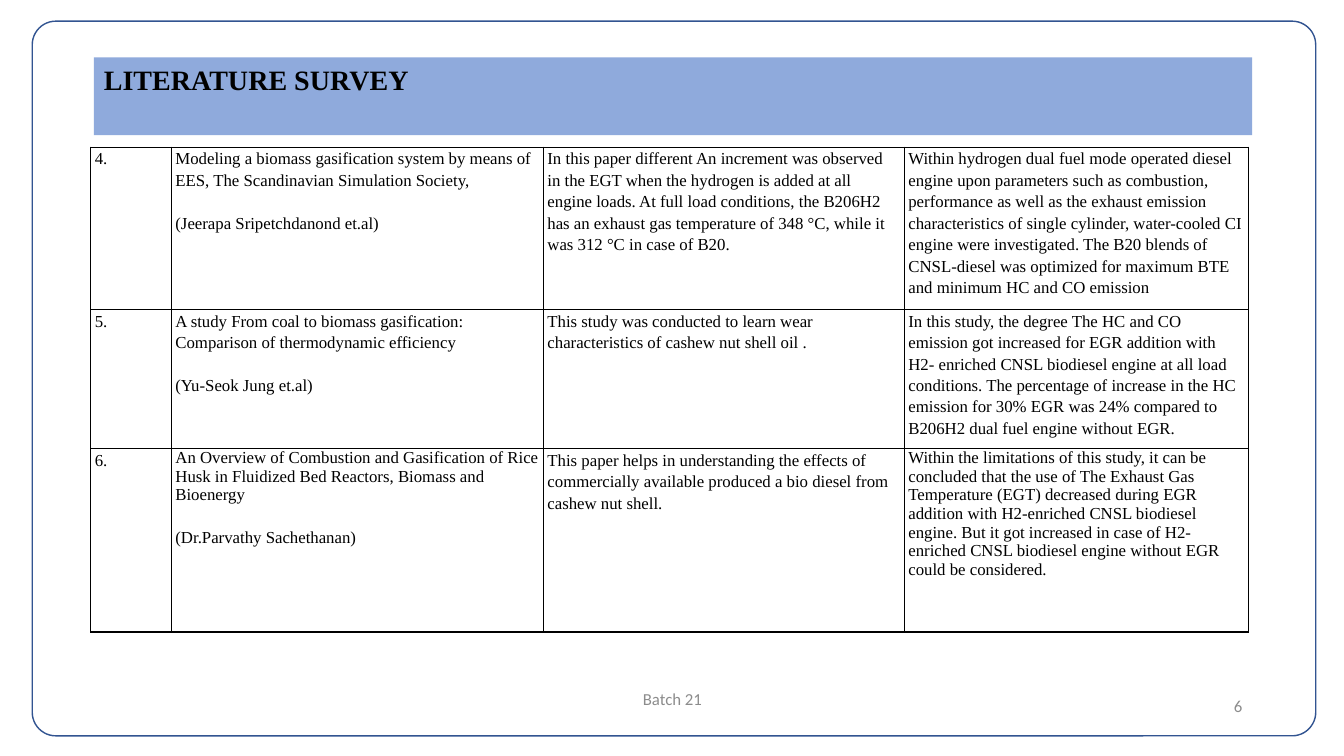
from dataclasses import dataclass

from lxml.etree import SubElement
from pptx import Presentation
from pptx.dml.color import RGBColor
from pptx.enum.shapes import MSO_SHAPE as Shape
from pptx.enum.text import MSO_ANCHOR as Anchor, MSO_AUTO_SIZE as AutoSize, PP_ALIGN as Align
from pptx.oxml.ns import qn
from pptx.util import Inches, Pt


@dataclass(frozen=True)
class Theme:
    frame: str = "325491"
    banner: str = "8FAADC"
    ink: str = "000000"
    muted: str = "8C8C8C"
    serif: str = "Times New Roman"
    sans: str = "Calibri"
    title_size: int = 20
    body_size: int = 12


theme = Theme()


def write(paragraph, text, font=theme.serif, size=theme.body_size, color=theme.ink,
          bold=False, align=Align.LEFT, line_spacing=1.0, before=0):
    paragraph.text = text
    paragraph.alignment = align
    paragraph.line_spacing = line_spacing
    paragraph.space_before = Pt(before)
    paragraph.font.name = font
    paragraph.font.size = Pt(size)
    paragraph.font.bold = bold
    paragraph.font.color.rgb = RGBColor.from_string(color)


def add_borders(cell):
    properties = cell._tc.get_or_add_tcPr()
    for side in ("a:lnL", "a:lnR", "a:lnT", "a:lnB"):
        border = SubElement(properties, qn(side), w=str(Pt(1)))
        fill = SubElement(border, qn("a:solidFill"))
        SubElement(fill, qn("a:srgbClr"), val=theme.ink)


presentation = Presentation()
presentation.slide_width = Inches(13.33)
presentation.slide_height = Inches(7.5)
slide = presentation.slides.add_slide(presentation.slide_layouts[5])

# Page frame
frame = slide.shapes.add_shape(
    Shape.ROUNDED_RECTANGLE, Inches(0.32), Inches(0.21), Inches(12.73), Inches(7.09))
frame.adjustments[0] = 0.033
frame.shadow.inherit = False
frame.fill.background()
frame.line.color.rgb = RGBColor.from_string(theme.frame)
frame.line.width = Pt(1)

# Title banner
title = slide.shapes.title
title.left, title.top = Inches(0.93), Inches(0.57)
title.width, title.height = Inches(11.49), Inches(0.77)
title.fill.solid()
title.fill.fore_color.rgb = RGBColor.from_string(theme.banner)
title.text_frame.auto_size = AutoSize.NONE
title.text_frame.vertical_anchor = Anchor.TOP
write(title.text_frame.paragraphs[0], "LITERATURE SURVEY", size=theme.title_size, bold=True)

# Footer
for text, left, top, width, align in (
    ("Batch 21", 4.42, 6.73, 4.5, Align.CENTER),
    ("6", 9.42, 6.8, 3, Align.RIGHT),
):
    box = slide.shapes.add_textbox(Inches(left), Inches(top), Inches(width), Inches(0.4))
    box.text_frame.word_wrap = True
    box.text_frame.vertical_anchor = Anchor.MIDDLE
    write(box.text_frame.paragraphs[0], text, font=theme.sans, color=theme.muted, align=align)

# Survey table: number, paper, author, method, findings
survey = (
    ("4.",
     "Modeling a biomass gasification system by means of EES, The Scandinavian Simulation Society,",
     "(Jeerapa Sripetchdanond et.al)",
     "In this paper different An increment was observed in the EGT when the hydrogen is added at "
     "all engine loads. At full load conditions, the B206H2 has an exhaust gas temperature of "
     "348 °C, while it was 312 °C in case of B20.",
     "Within hydrogen dual fuel mode operated diesel engine upon parameters such as combustion, "
     "performance as well as the exhaust emission characteristics of single cylinder, water-cooled "
     "CI engine were investigated. The B20 blends of CNSL-diesel was optimized for maximum BTE "
     "and minimum HC and CO emission"),
    ("5.",
     "A study From coal to biomass gasification: Comparison of thermodynamic efficiency",
     "(Yu-Seok Jung et.al)",
     "This study was conducted to learn wear characteristics of cashew nut shell oil .",
     "In this study, the degree The HC and CO emission got increased for EGR addition with "
     "H2- enriched CNSL biodiesel engine at all load conditions. The percentage of increase in "
     "the HC emission for 30% EGR was 24% compared to B206H2 dual fuel engine without EGR."),
    ("6.",
     "An Overview of Combustion and Gasification of Rice Husk in Fluidized Bed Reactors, "
     "Biomass and Bioenergy",
     "(Dr.Parvathy Sachethanan)",
     "This paper helps in understanding the effects of commercially available produced a bio "
     "diesel from cashew nut shell.",
     "Within the limitations of this study, it can be concluded that the use of The Exhaust Gas "
     "Temperature (EGT) decreased during EGR addition with H2-enriched CNSL biodiesel engine. "
     "But it got increased in case of H2-enriched CNSL biodiesel engine without EGR could be "
     "considered."),
)
column_widths = (0.8, 3.69, 3.58, 3.41)
row_heights = (1.61, 1.38, 1.82)
loose = 1.15
author_gap = 15.4

table = slide.shapes.add_table(
    len(row_heights), len(column_widths),
    Inches(0.9), Inches(1.46), Inches(11.47), Inches(4.81)).table
table.first_row = False
table.horz_banding = False
for column, width in zip(table.columns, column_widths):
    column.width = Inches(width)

for row, height, (number, paper, author, method, findings) in zip(table.rows, row_heights, survey):
    row.height = Inches(height)
    tight = 1.0 if number == "6." else loose
    contents = ((number, loose), (paper, tight), (method, loose), (findings, tight))
    for cell, (text, spacing) in zip(row.cells, contents):
        cell.margin_left = cell.margin_right = Inches(0.04)
        cell.margin_top = cell.margin_bottom = 0
        add_borders(cell)
        cell.fill.background()
        write(cell.text_frame.paragraphs[0], text, line_spacing=spacing)
    write(row.cells[1].text_frame.add_paragraph(), author,
          line_spacing=loose, before=author_gap)

presentation.save("out.pptx")
